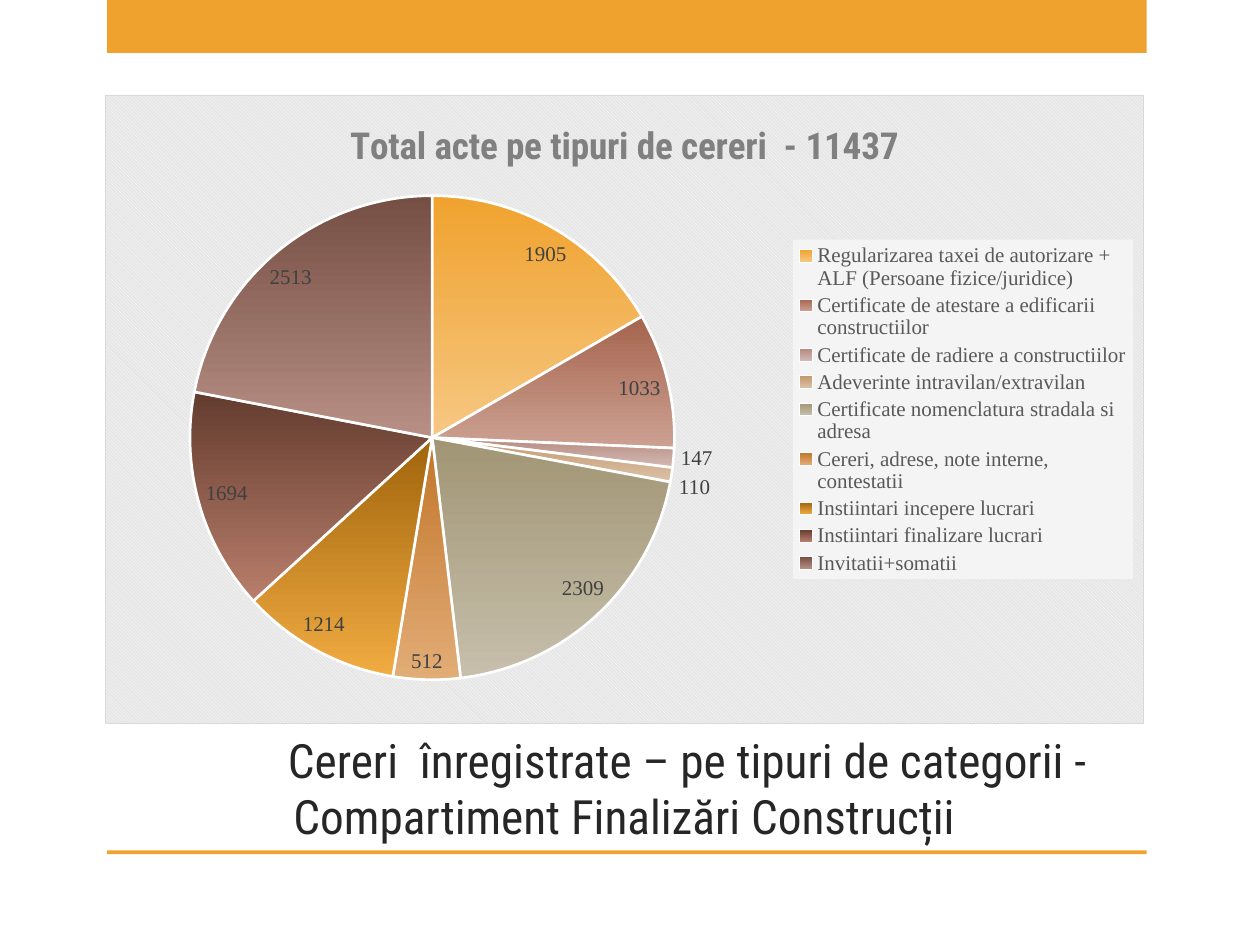
from dataclasses import dataclass
from typing import Any, NamedTuple

from lxml import etree
from pptx import Presentation
from pptx import util as u
from pptx.chart.data import CategoryChartData
from pptx.dml.color import RGBColor
from pptx.enum import chart as ch, shapes, text
from pptx.oxml import parse_xml
from pptx.oxml.ns import nsdecls, qn


@dataclass(frozen=True)
class Theme:
    accent: str = "F0A22E"
    white: str = "FFFFFF"
    heading: str = "262626"
    chart_title: str = "808080"
    label: str = "404040"
    legend: str = "595959"
    legend_fill: str = "F4F4F4"
    area: str = "E6E6E6"
    border: str = "D9D9D9"
    sans: str = "Roboto Condensed"
    serif: str = "Times New Roman"
    heading_size: float = 27
    title_size: float = 21.3
    text_size: float = 12


class Box(NamedTuple):
    left: float
    top: float
    width: float
    height: float

    def inches(self) -> list[int]:
        return [u.Inches(v) for v in self]


class Slice(NamedTuple):
    name: str
    value: int
    top: str
    bottom: str


T = Theme()
CHART_TITLE = "Total acte pe tipuri de cereri  - 11437"
HEADING = "\tCereri  înregistrate – pe tipuri de categorii -\vCompartiment Finalizări Construcții"
BARS = [Box(0.85, 0, 8.25, 0.42), Box(0.85, 6.75, 8.25, 0.03)]
HEADING_BOX = Box(0.83, 5.5, 8.25, 1.25)
CHART_BOX = Box(0.83, 0.75, 8.25, 5)
PLOT_LAYOUT = {"x": 0.08, "y": 0.16, "w": 0.47, "h": 0.77}
SLICES = [
    Slice("Regularizarea taxei de autorizare + ALF (Persoane fizice/juridice)", 1905, "F0A22E", "F6C782"),
    Slice("Certificate de atestare a edificarii constructiilor", 1033, "A5644E", "CCA192"),
    Slice("Certificate de radiere a constructiilor", 147, "B58B80", "D3B9B3"),
    Slice("Adeverinte intravilan/extravilan", 110, "C3986D", "DBC1A7"),
    Slice("Certificate nomenclatura stradala si adresa", 2309, "A19574", "C7BFAC"),
    Slice("Cereri, adrese, note interne, contestatii", 512, "C17529", "E2AC76"),
    Slice("Instiintari incepere lucrari", 1214, "A0640B", "F1AB42"),
    Slice("Instiintari finalizare lucrari", 1694, "633C2F", "B97E6B"),
    Slice("Invitatii+somatii", 2513, "754E44", "B78F84"),
]


def set_font(font: Any, color: str, name: str, size: float, bold: bool = False) -> None:
    for key, value in {"name": name, "size": u.Pt(size), "bold": bold}.items():
        setattr(font, key, value)
    font.color.rgb = RGBColor.from_string(color)


def add_bar(s: Any, box: Box) -> None:
    sp = s.shapes.add_shape(shapes.MSO_SHAPE.RECTANGLE, *box.inches())
    sp.shadow.inherit = False
    sp.fill.solid()
    sp.fill.fore_color.rgb = RGBColor.from_string(T.accent)
    sp.line.fill.background()


def add_heading(s: Any) -> None:
    tf = s.shapes.add_textbox(*HEADING_BOX.inches()).text_frame
    frame = {
        "word_wrap": True,
        "vertical_anchor": text.MSO_ANCHOR.BOTTOM,
        "margin_bottom": u.Inches(0.05),
    }
    for key, value in frame.items():
        setattr(tf, key, value)
    p = tf.paragraphs[0]
    p.text = HEADING
    p.alignment = text.PP_ALIGN.CENTER
    tabs = etree.SubElement(p._p.get_or_add_pPr(), qn("a:tabLst"))
    etree.SubElement(tabs, qn("a:tab"), pos=str(u.Inches(1)), algn="l")
    for r in p.runs:
        set_font(r.font, T.heading, T.sans, T.heading_size)


def set_plot_layout(plot_area: Any) -> None:
    for old in plot_area.findall(qn("c:layout")):
        plot_area.remove(old)
    layout = etree.Element(qn("c:layout"))
    manual = etree.SubElement(layout, qn("c:manualLayout"))
    values = {"layoutTarget": "inner", "xMode": "edge", "yMode": "edge", **PLOT_LAYOUT}
    for key, value in values.items():
        etree.SubElement(manual, qn(f"c:{key}"), val=str(value))
    plot_area.insert(0, layout)


def shape_properties(content: str) -> Any:
    return parse_xml(f"<c:spPr {nsdecls('c', 'a')}>{content}</c:spPr>")


def solid(color: str) -> str:
    return f'<a:solidFill><a:srgbClr val="{color}"/></a:solidFill>'


def style_slice(point: Any, item: Slice) -> None:
    fill = point.format.fill
    fill.gradient()
    fill.gradient_angle = 270
    for stop, color in zip(fill.gradient_stops, (item.top, item.bottom)):
        stop.color.rgb = RGBColor.from_string(color)
    line = point.format.line
    line.color.rgb = RGBColor.from_string(T.white)
    line.width = u.Pt(1.5)


def add_pie(s: Any) -> None:
    data = CategoryChartData()
    data.categories = [item.name for item in SLICES]
    data.add_series(CHART_TITLE, [item.value for item in SLICES])
    chart = s.shapes.add_chart(ch.XL_CHART_TYPE.PIE, *CHART_BOX.inches(), data).chart
    set_font(chart.font, "000000", T.serif, 10)

    chart.has_title = True
    p = chart.chart_title.text_frame.paragraphs[0]
    r = p.add_run()
    r.text = CHART_TITLE
    set_font(r.font, T.chart_title, T.sans, T.title_size, True)

    chart.has_legend = True
    legend = chart.legend
    legend.position = ch.XL_LEGEND_POSITION.RIGHT
    legend.include_in_layout = False
    set_font(legend.font, T.legend, T.serif, T.text_size)

    plot = chart.plots[0]
    plot.vary_by_categories = True
    series = plot.series[0]
    labels = series.data_labels
    for key, value in {"show_value": True, "show_percentage": False,
                       "position": ch.XL_LABEL_POSITION.BEST_FIT}.items():
        setattr(labels, key, value)
    set_font(labels.font, T.label, T.serif, T.text_size)
    for i, item in enumerate(SLICES):
        style_slice(series.points[i], item)

    root = chart.element.find(qn("c:chart"))
    set_plot_layout(root.find(qn("c:plotArea")))
    legend_text = root.find(qn("c:legend")).find(qn("c:txPr"))
    legend_text.addprevious(shape_properties(solid(T.legend_fill)))
    root.addnext(shape_properties(
        f'<a:pattFill prst="dkDnDiag"><a:fgClr><a:srgbClr val="{T.white}"/></a:fgClr>'
        f'<a:bgClr><a:srgbClr val="{T.area}"/></a:bgClr></a:pattFill>'
        f'<a:ln w="{u.Pt(0.75)}">{solid(T.border)}</a:ln>'))


def main() -> None:
    prs = Presentation()
    prs.slide_width, prs.slide_height = u.Inches(10), u.Inches(7.5)
    s = prs.slides.add_slide(prs.slide_layouts[6])
    for box in BARS:
        add_bar(s, box)
    add_heading(s)
    add_pie(s)
    prs.save("out.pptx")


if __name__ == "__main__":
    main()
